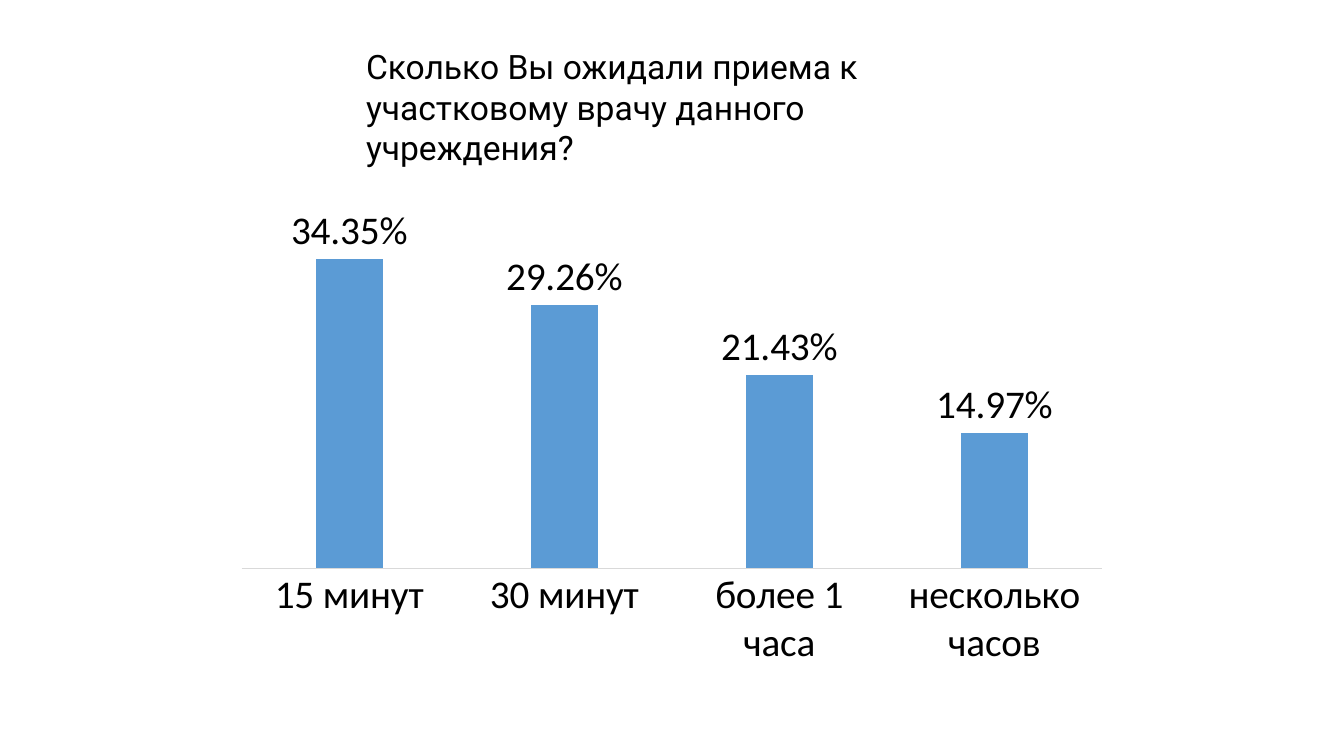
from pptx import Presentation
from pptx.chart.data import CategoryChartData
from pptx.dml.color import RGBColor
from pptx.enum.chart import XL_CHART_TYPE, XL_LABEL_POSITION, XL_TICK_MARK
from pptx.enum.text import MSO_ANCHOR, MSO_AUTO_SIZE, PP_ALIGN
from pptx.util import Cm, Pt

COLUMNS = XL_CHART_TYPE.COLUMN_CLUSTERED
OUTSIDE_END = XL_LABEL_POSITION.OUTSIDE_END
NO_TICK = XL_TICK_MARK.NONE
TOP = MSO_ANCHOR.TOP
GROW = MSO_AUTO_SIZE.SHAPE_TO_FIT_TEXT
LEFT = PP_ALIGN.LEFT

QUESTION = "Сколько Вы ожидали приема к участковому врачу данного учреждения?"
WAITING_SHARES = {
    "15 минут": 0.3435,
    "30 минут": 0.2926,
    "более 1 часа": 0.2143,
    "несколько часов": 0.1497,
}


def color(hex_value):
    return RGBColor.from_string(hex_value)


class SurveySlide:
    """Holds the survey style and the slide being built."""

    question_font, question_size = "Roboto", 24
    chart_font, chart_size = "Calibri", 28
    ink, bar, baseline = "000000", "5B9BD5", "D9D9D9"
    percent = "0.00%"

    def __init__(self, presentation):
        title_only = presentation.slide_layouts[5]
        self.slide = presentation.slides.add_slide(title_only)

    def style(self, font, name, size):
        font.name = name
        font.size = Pt(size)
        font.color.rgb = color(self.ink)

    def question(self, wording, left, top, width, height):
        title = self.slide.shapes.title
        title.left, title.top = Cm(left), Cm(top)
        title.width, title.height = Cm(width), Cm(height)
        frame = title.text_frame
        frame.text = wording
        frame.word_wrap = True
        frame.auto_size = GROW
        frame.vertical_anchor = TOP
        paragraph = frame.paragraphs[0]
        paragraph.alignment = LEFT
        paragraph.line_spacing = 1.0
        self.style(paragraph.runs[0].font, self.question_font, self.question_size)

    def column_chart(self, shares, left, top, width, height):
        answers = CategoryChartData(number_format=self.percent)
        answers.categories = list(shares)
        answers.add_series("Series 1", list(shares.values()))
        chart = self.slide.shapes.add_chart(
            COLUMNS, Cm(left), Cm(top), Cm(width), Cm(height), answers
        ).chart
        chart.has_title = False
        chart.has_legend = False
        self.style(chart.font, self.chart_font, self.chart_size)
        self.axes(chart)
        self.columns(chart.plots[0])

    def axes(self, chart):
        waiting_time = chart.category_axis
        waiting_time.major_tick_mark = NO_TICK
        waiting_time.minor_tick_mark = NO_TICK
        waiting_time.format.line.color.rgb = color(self.baseline)
        waiting_time.format.line.width = Pt(0.75)
        self.style(waiting_time.tick_labels.font, self.chart_font, self.chart_size)
        share = chart.value_axis
        share.minimum_scale, share.maximum_scale = 0, 0.4
        share.has_major_gridlines = False
        share.tick_labels.number_format = self.percent
        share.tick_labels.number_format_is_linked = False
        share.visible = False

    def columns(self, plot):
        plot.vary_by_categories = False
        plot.gap_width, plot.overlap = 219, -27
        fill = plot.series[0].format.fill
        fill.solid()
        fill.fore_color.rgb = color(self.bar)
        labels = plot.series[0].data_labels
        labels.show_value = True
        labels.position = OUTSIDE_END
        labels.number_format = self.percent
        labels.number_format_is_linked = False
        self.style(labels.font, self.chart_font, self.chart_size)


def main():
    presentation = Presentation()
    presentation.slide_width, presentation.slide_height = Cm(33.87), Cm(19.05)
    survey = SurveySlide(presentation)
    survey.question(QUESTION, 8.97, 1.04, 16.94, 2.31)
    survey.column_chart(WAITING_SHARES, 5.64, 5, 22.58, 12.04)
    presentation.save("out.pptx")


if __name__ == "__main__":
    main()
